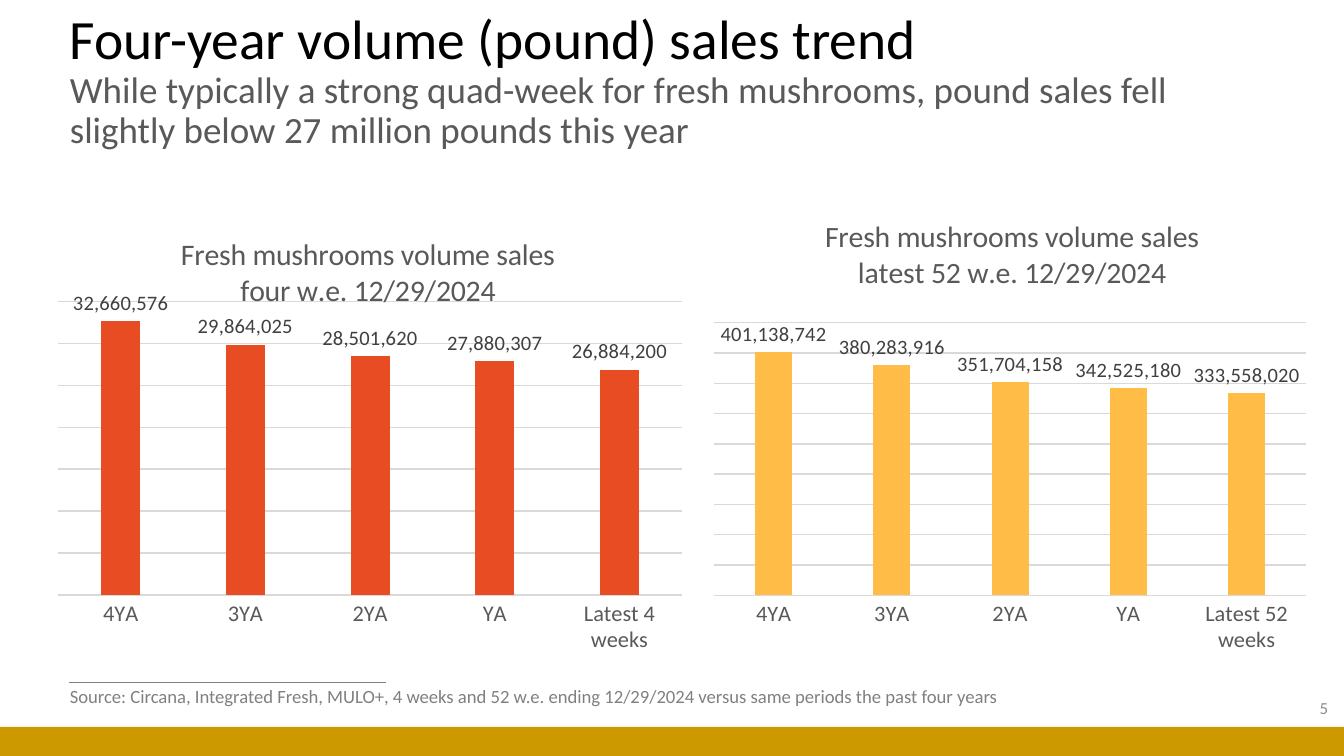
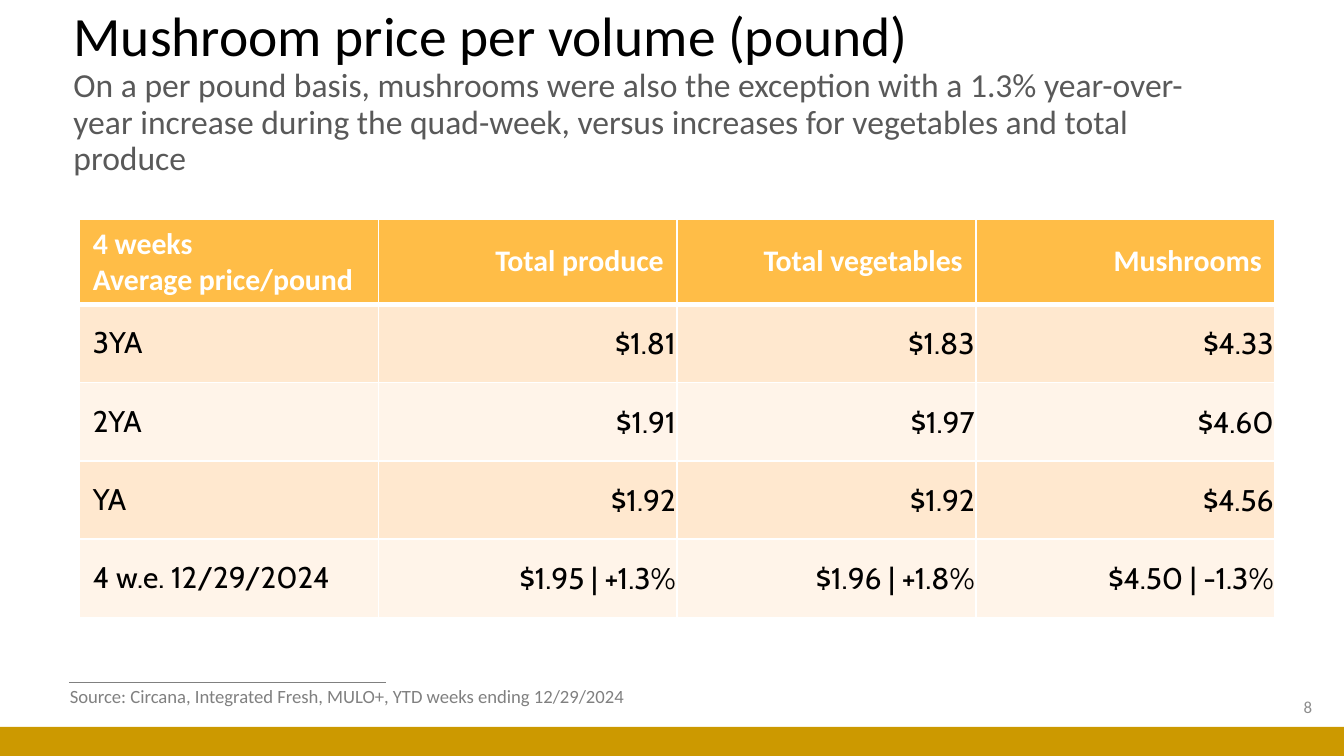
from lxml import etree
from pptx import Presentation
from pptx.chart.data import CategoryChartData as ChartData
from pptx.dml.color import RGBColor
from pptx.enum.chart import XL_CHART_TYPE as Kind, XL_LABEL_POSITION as Spot, XL_TICK_MARK as Tick
from pptx.enum.shapes import MSO_CONNECTOR as Line, MSO_SHAPE as Shape
from pptx.enum.text import MSO_ANCHOR as Anchor, MSO_AUTO_SIZE as Fit, PP_ALIGN as Align
from pptx.oxml.ns import qn
from pptx.util import Cm, Pt

COLORS = {
    "black": "000000", "white": "FFFFFF", "text": "595959", "label": "404040",
    "source": "808080", "page": "8C8C8C", "grid": "D9D9D9", "band": "CC9900",
    "red": "E84C22", "gold": "FFBD47", "dark": "FFE8CF", "light": "FFF4E9",
}
FONT, BODY = "Calibri", "Cabin"
WIDE, HIGH = 25.4, 14.29
BAND = 0.55


def paint(name):
    return RGBColor.from_string(COLORS[name])


def style(font, size, color, face=FONT, bold=False):
    font.name, font.size, font.bold = face, Pt(size), bold
    font.color.rgb = paint(color)


def write(para, text, *look, **more):
    run = para.add_run()
    run.text = text
    style(run.font, *look, **more)


def add_text(slide, box, anchor=Anchor.TOP, wrap=True):
    """Add a text box and return its frame."""
    frame = slide.shapes.add_textbox(*map(Cm, box)).text_frame
    frame.word_wrap, frame.vertical_anchor = wrap, anchor
    return frame


def add_base(slide):
    """Draw the source rule and the bottom band."""
    rule = slide.shapes.add_connector(Line.STRAIGHT, Cm(1.3), Cm(12.9), Cm(7.29), Cm(12.9))
    rule.line.color.rgb, rule.line.width = paint("source"), Pt(0.5)
    etree.SubElement(rule._element.spPr, qn("a:effectLst"))
    band = slide.shapes.add_shape(Shape.RECTANGLE, 0, Cm(HIGH - BAND), Cm(WIDE), Cm(BAND))
    band.shadow.inherit = False
    band.fill.solid()
    band.fill.fore_color.rgb = paint("band")
    band.line.fill.background()


def add_title(slide, box, head, sub, size):
    para = add_text(slide, box, Anchor.MIDDLE).paragraphs[0]
    para.line_spacing = 0.9
    write(para, head, 29.7, "black")
    para.add_line_break()
    write(para, sub, size, "text")


def add_page(slide, left, top, number):
    para = add_text(slide, (left, top, 5.72, 0.76), Anchor.MIDDLE).paragraphs[0]
    para.alignment = Align.RIGHT
    write(para, number, 9, "page")


def add_source(slide, width, text):
    frame = add_text(slide, (1.07, 12.83, width, 0.69), wrap=False)
    frame.auto_size = Fit.SHAPE_TO_FIT_TEXT
    write(frame.paragraphs[0], text, 10, "source")


def set_layout(node, index, **parts):
    """Give a chart element a manual layout, as shares of the chart."""
    for old in node.findall(qn("c:layout")):
        node.remove(old)
    layout = etree.Element(qn("c:layout"))
    node.insert(index, layout)
    manual = etree.SubElement(layout, qn("c:manualLayout"))
    if "w" in parts:
        etree.SubElement(manual, qn("c:layoutTarget")).set("val", "inner")
    for key in "xy":
        etree.SubElement(manual, qn(f"c:{key}Mode")).set("val", "edge")
    for key, value in parts.items():
        etree.SubElement(manual, qn(f"c:{key}")).set("val", str(value))


def add_chart(slide, box, lines, start, last, values, color, top, step, area):
    """Add a column chart; start places the title and area the plot."""
    data = ChartData(number_format="#,##0")
    data.categories = ["4YA", "3YA", "2YA", "YA", last]
    data.add_series("Series 1", values)
    chart = slide.shapes.add_chart(Kind.COLUMN_CLUSTERED, *map(Cm, box), data).chart
    style(chart.font, 10, "black")
    chart.has_legend = False

    para = chart.chart_title.text_frame.paragraphs[0]
    write(para, lines[0], 16, "text")
    para.add_line_break()
    write(para, lines[1], 16, "text")
    set_layout(chart.chart_title._element, 1, x=start[0], y=start[1])
    set_layout(chart._chartSpace.chart.plotArea, 0, x=0, y=area[0], w=1, h=area[1])

    plot = chart.plots[0]
    plot.gap_width, plot.overlap, plot.vary_by_categories = 219, -27, False
    fill = plot.series[0].format.fill
    fill.solid()
    fill.fore_color.rgb = paint(color)
    plot.has_data_labels = True
    labels = plot.data_labels
    labels.show_value, labels.position = True, Spot.OUTSIDE_END
    labels.number_format, labels.number_format_is_linked = "#,##0", False
    style(labels.font, 11, "label")

    cats, vals = chart.category_axis, chart.value_axis
    cats.major_tick_mark = cats.minor_tick_mark = Tick.NONE
    style(cats.tick_labels.font, 12, "text")
    vals.visible, vals.has_major_gridlines = False, True
    vals.minimum_scale, vals.maximum_scale, vals.major_unit = 0, top, step
    for line in (cats.format.line, vals.major_gridlines.format.line):
        line.color.rgb, line.width = paint("grid"), Pt(0.75)


def set_border(cell, top, bottom):
    """Draw white cell borders; top and bottom are widths in points."""
    props = cell._tc.get_or_add_tcPr()
    for i, (side, width) in enumerate(zip("LRTB", (1, 1, top, bottom))):
        line = etree.Element(qn(f"a:ln{side}"), w=str(Pt(width)))
        props.insert(i, line)
        fill = etree.SubElement(line, qn("a:solidFill"))
        etree.SubElement(fill, qn("a:srgbClr")).set("val", COLORS["white"])


def fill_cell(cell, text, row, col):
    head = row == 0
    cell.vertical_anchor = Anchor.MIDDLE
    set_border(cell, 3 if row == 1 else 1, 3 if head else 1)
    cell.fill.solid()
    cell.fill.fore_color.rgb = paint("gold" if head else ("light", "dark")[row % 2])
    if col and not head:
        cell.margin_left = cell.margin_right = cell.margin_top = Cm(0.03)
        cell.margin_bottom = 0
    frame = cell.text_frame
    for i, line in enumerate(text.split("\n")):
        para = frame.add_paragraph() if i else frame.paragraphs[0]
        if col:
            para.alignment = Align.RIGHT
        if head:
            write(para, line, 16, "white", bold=True)
        else:
            write(para, line, 16, "black", face=BODY)


def add_table(slide, left, top, width, heights, rows):
    count = len(rows[0])
    table = slide.shapes.add_table(
        len(rows), count, Cm(left), Cm(top), Cm(width), Cm(sum(heights))).table
    table.horz_banding = False
    for col in table.columns:
        col.width = Cm(width / count)
    for r, texts in enumerate(rows):
        table.rows[r].height = Cm(heights[r])
        for c, text in enumerate(texts):
            fill_cell(table.cell(r, c), text, r, c)


def sales_slide(slide):
    add_base(slide)
    add_title(slide, (1.07, 0.53, 21.84, 2.01), "Four-year volume (pound) sales trend",
              "While typically a strong quad-week for fresh mushrooms, pound sales fell "
              "slightly below 27 million pounds this year", 19.8)
    add_page(slide, 19.63, 13, "5")
    add_source(slide, 18.39, "Source: Circana, Integrated Fresh, MULO+, 4 weeks and 52 w.e. "
               "ending 12/29/2024 versus same periods the past four years")
    head = "Fresh mushrooms volume sales"
    add_chart(slide, (1.09, 3.94, 11.81, 8.41), (head, "four w.e. 12/29/2024"), (0.19, 0.05),
              "Latest 4 weeks", (32660576, 29864025, 28501620, 27880307, 26884200),
              "red", 35e6, 5e6, (0.21, 0.66))
    add_chart(slide, (13.49, 3.94, 11.2, 8.41), (head, "latest 52 w.e. 12/29/2024"), (0.18, 0.01),
              "Latest 52 weeks", (401138742, 380283916, 351704158, 342525180, 333558020),
              "gold", 450e6, 50e6, (0.26, 0.62))


def price_slide(slide):
    add_base(slide)
    add_title(slide, (1.14, 0.56, 22.2, 2.41), "Mushroom price per volume (pound)",
              "On a per pound basis, mushrooms were also the exception with a 1.3% "
              "year-over-year increase during the quad-week, versus increases for "
              "vegetables and total produce", 18)
    add_page(slide, 19.33, 12.98, "8")
    add_table(slide, 1.5, 4.14, 22.6, [1.5] + [1.48] * 4, [
        ("4 weeks\nAverage price/pound", "Total produce", "Total vegetables", "Mushrooms"),
        ("3YA", "$1.81", "$1.83", "$4.33"),
        ("2YA", "$1.91", "$1.97", "$4.60"),
        ("YA", "$1.92", "$1.92", "$4.56"),
        ("4 w.e. 12/29/2024", "$1.95 | +1.3%", "$1.96 | +1.8%", "$4.50 | -1.3%"),
    ])
    add_source(slide, 11.2, "Source: Circana, Integrated Fresh, MULO+, "
               "YTD weeks ending 12/29/2024")


def main():
    deck = Presentation()
    deck.slide_width, deck.slide_height = Cm(WIDE), Cm(HIGH)
    for build in (sales_slide, price_slide):
        build(deck.slides.add_slide(deck.slide_layouts[6]))
    deck.save("out.pptx")


if __name__ == "__main__":
    main()
